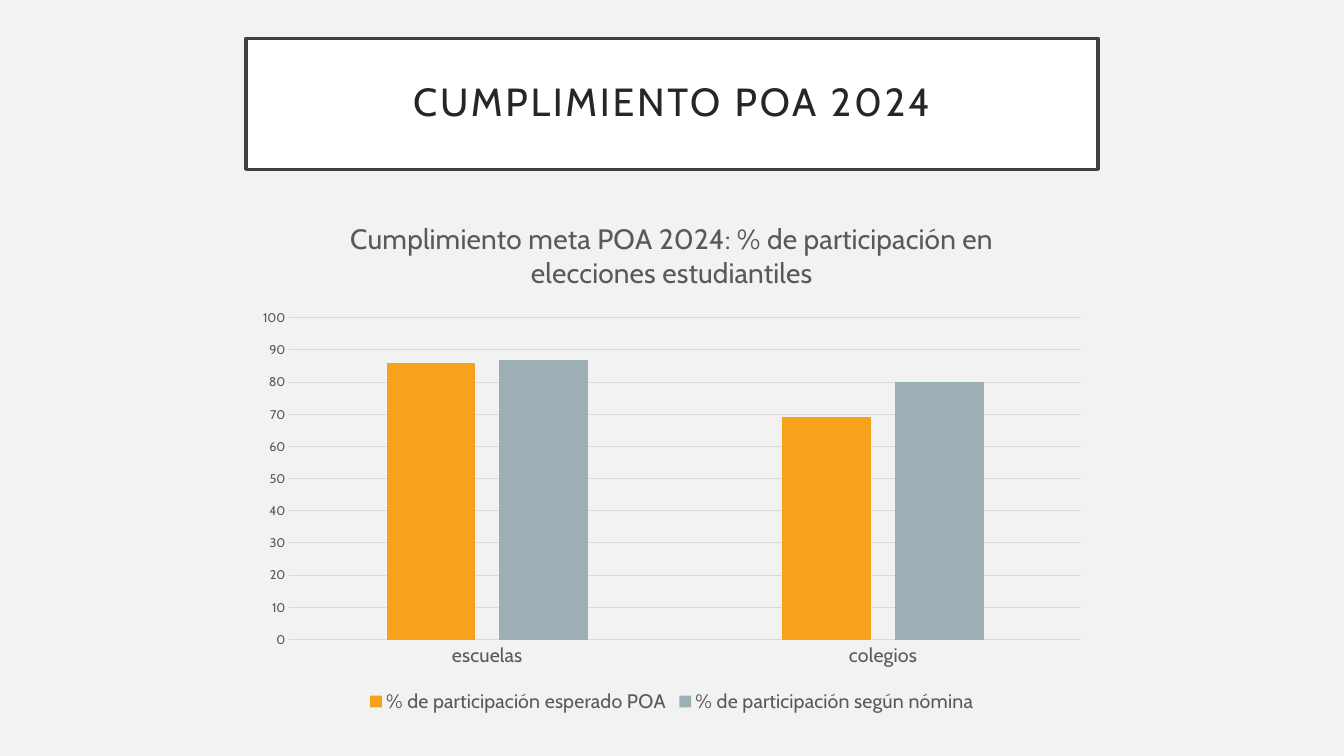
from pptx import Presentation
from pptx.chart.data import CategoryChartData
from pptx.dml.color import RGBColor
from pptx.enum.chart import XL_CHART_TYPE, XL_LEGEND_POSITION, XL_TICK_MARK
from pptx.enum.text import MSO_ANCHOR, MSO_AUTO_SIZE, PP_ALIGN
from pptx.util import Inches, Pt

COLUMNS = XL_CHART_TYPE.COLUMN_CLUSTERED
BOTTOM = XL_LEGEND_POSITION.BOTTOM
NO_TICK = XL_TICK_MARK.NONE
MIDDLE = MSO_ANCHOR.MIDDLE
NO_AUTOFIT = MSO_AUTO_SIZE.NONE
CENTER = PP_ALIGN.CENTER

WIDTH, HEIGHT = Inches(13.33), Inches(7.5)
LEFT_SHARE, WIDTH_SHARE = 18.3, 63.39
FONT = "Cabin"
COLORS = {
    "background": "F2F2F2",
    "panel": "FFFFFF",
    "border": "404040",
    "heading": "262626",
    "label": "595959",
    "grid": "D9D9D9",
    "expected": "F6A21D",
    "actual": "9BAFB5",
}
HEADING = "CUMPLIMIENTO POA 2024"
CHART_TITLE = "Cumplimiento meta POA 2024: % de participación en elecciones estudiantiles"
LEVELS = ["escuelas", "colegios"]
PARTICIPATION = [
    ("% de participación esperado POA", (86, 69), "expected"),
    ("% de participación según nómina", (87, 80), "actual"),
]


def color(name):
    """Return the named palette colour."""
    return RGBColor.from_string(COLORS[name])


def apply(target, values):
    """Set each attribute of target from a dict of values."""
    for attribute, value in values.items():
        setattr(target, attribute, value)


def band(top, height):
    """Return the frame of the central column, given in percent of the slide."""
    return (
        round(WIDTH * LEFT_SHARE / 100),
        round(HEIGHT * top / 100),
        round(WIDTH * WIDTH_SHARE / 100),
        round(HEIGHT * height / 100),
    )


def paint(fill, name):
    """Fill with a solid palette colour."""
    fill.solid()
    fill.fore_color.rgb = color(name)


def stroke(line, name, points):
    """Draw a line in a palette colour and width."""
    paint(line.fill, name)
    line.width = Pt(points)


def style_font(font, points, name="label"):
    """Set typeface, size and colour of a font."""
    apply(font, {"name": FONT, "size": Pt(points), "bold": False})
    font.color.rgb = color(name)


def fill_heading(heading, frame):
    """Write the framed heading in the title placeholder."""
    apply(heading, dict(zip(("left", "top", "width", "height"), frame)))
    paint(heading.fill, "panel")
    stroke(heading.line, "border", 2.5)
    text = heading.text_frame
    margins = ("margin_left", "margin_top", "margin_right", "margin_bottom")
    apply(text, dict.fromkeys(margins, Inches(0.2)))
    apply(text, {"vertical_anchor": MIDDLE, "word_wrap": True, "auto_size": NO_AUTOFIT})
    paragraph = text.paragraphs[0]
    apply(paragraph, {"alignment": CENTER, "line_spacing": 0.9})
    run = paragraph.add_run()
    run.text = HEADING
    style_font(run.font, 28, "heading")
    run.font._element.set("spc", "200")


def style_axis(axis, points):
    """Remove tick marks and format the labels of an axis."""
    apply(axis, {"major_tick_mark": NO_TICK, "minor_tick_mark": NO_TICK})
    style_font(axis.tick_labels.font, points)


def add_participation_chart(slide, frame):
    """Add the column chart of expected and actual participation."""
    data = CategoryChartData()
    data.categories = LEVELS
    for name, percentages, _ in PARTICIPATION:
        data.add_series(name, percentages)
    chart = slide.shapes.add_chart(COLUMNS, *frame, data).chart
    style_font(chart.font, 10)

    caption = chart.chart_title.text_frame.paragraphs[0].add_run()
    caption.text = CHART_TITLE
    style_font(caption.font, 20)
    chart.chart_title.include_in_layout = False

    style_axis(chart.category_axis, 14)
    stroke(chart.category_axis.format.line, "grid", 0.75)
    percent_axis = chart.value_axis
    style_axis(percent_axis, 9)
    apply(percent_axis, {"minimum_scale": 0, "maximum_scale": 100, "major_unit": 10})
    percent_axis.format.line.fill.background()
    stroke(percent_axis.major_gridlines.format.line, "grid", 0.75)

    chart.has_legend = True
    apply(chart.legend, {"position": BOTTOM, "include_in_layout": False})
    style_font(chart.legend.font, 14)

    plot = chart.plots[0]
    apply(plot, {"gap_width": 219, "overlap": -27, "vary_by_categories": False})
    for series, (_, _, tone) in zip(plot.series, PARTICIPATION):
        paint(series.format.fill, tone)


def main():
    """Build the slide and save it."""
    deck = Presentation()
    apply(deck, {"slide_width": WIDTH, "slide_height": HEIGHT})
    slide = deck.slides.add_slide(deck.slide_layouts.get_by_name("Title Only"))
    paint(slide.background.fill, "background")
    fill_heading(slide.shapes.title, band(5.07, 17.33))
    add_participation_chart(slide, band(26.13, 68.8))
    deck.save("out.pptx")


if __name__ == "__main__":
    main()
